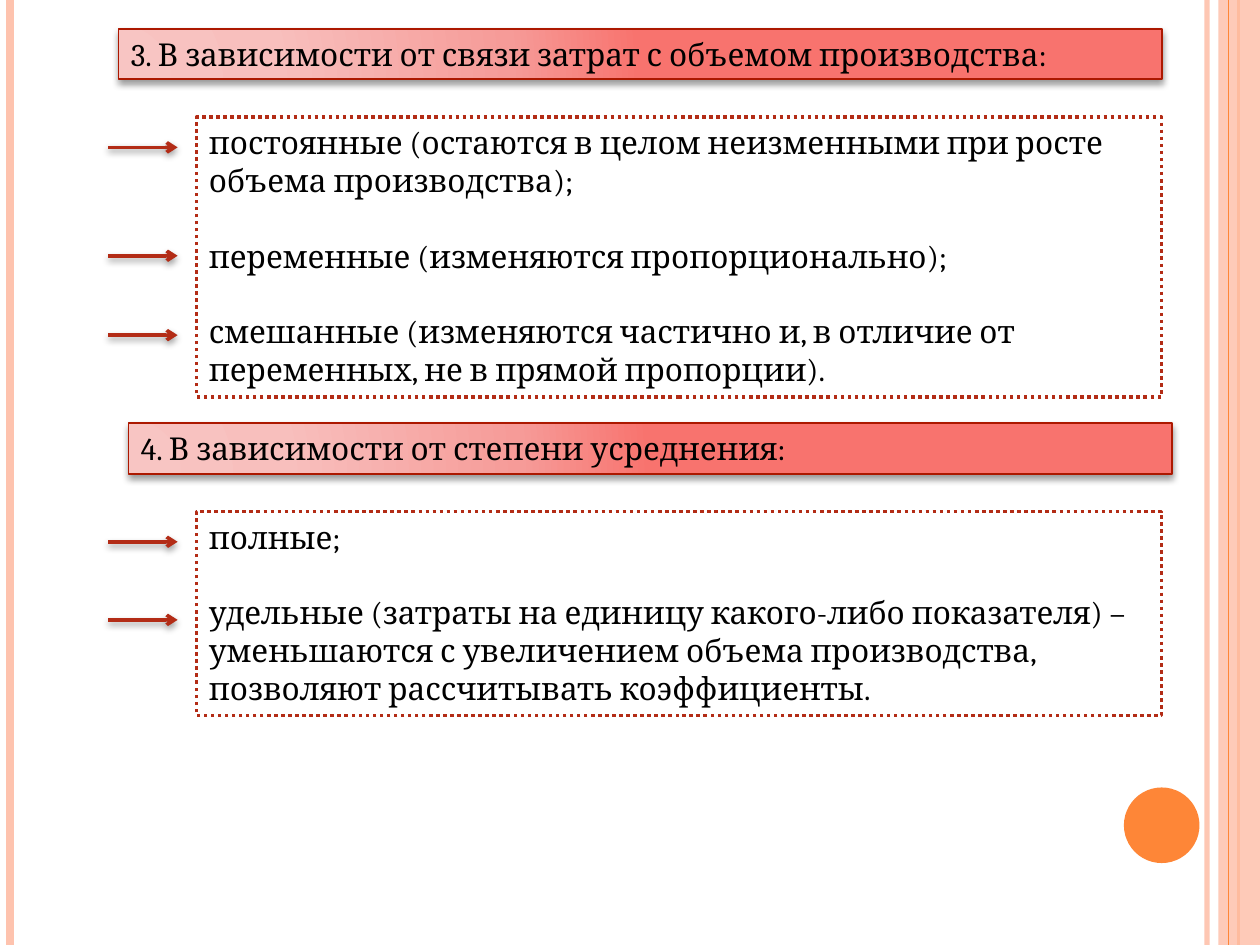
from lxml import etree
from pptx import Presentation
from pptx.dml.color import RGBColor
from pptx.enum.dml import MSO_LINE
from pptx.enum.shapes import MSO_CONNECTOR, MSO_SHAPE
from pptx.enum.text import MSO_ANCHOR, PP_ALIGN
from pptx.oxml import parse_xml
from pptx.oxml.ns import qn
from pptx.util import Inches, Pt

DOTS = MSO_LINE.ROUND_DOT
STRAIGHT = MSO_CONNECTOR.STRAIGHT
RECT = MSO_SHAPE.RECTANGLE
OVAL = MSO_SHAPE.OVAL
LEFT = PP_ALIGN.LEFT
TOP = MSO_ANCHOR.TOP

FONT = "Cambria"
ORANGE = "FE8637"
PEACH = "FEC3AE"
RED = "B32C16"
SPACE = "http://schemas.openxmlformats.org/drawingml/2006/main"
STOPS = [(0, "F8C5C3"), (30, "F8BFBD"), (75, "F69B98"), (100, "F8736E")]

BARS = [(9.58, PEACH, 3, 93), (0.08, PEACH, 4.5, 100), (9.83, ORANGE, 1.5, 100)]
GROUPS = [
    (0.94, 0.23, "3. В зависимости от связи затрат с объемом производства:", 2.22,
     ["постоянные (остаются в целом неизменными при росте объема производства);",
      "переменные (изменяются пропорционально);",
      "смешанные (изменяются частично и, в отличие от переменных, не в прямой пропорции)."],
     [1.17, 2.03, 2.66]),
    (1.02, 3.36, "4. В зависимости от степени усреднения:", 1.62,
     ["полные;",
      "удельные (затраты на единицу какого-либо показателя) – уменьшаются с увеличением "
      "объема производства, позволяют рассчитывать коэффициенты."],
     [4.3, 4.92]),
]


def color(code):
    return RGBColor.from_string(code)


def fade(item, alpha):
    if alpha < 100:
        tone = next(item._element.spPr.iter(qn("a:srgbClr")))
        etree.SubElement(tone, qn("a:alpha"), val=str(alpha * 1000))


def cast(item):
    item._element.spPr.append(parse_xml(
        f'<a:effectLst xmlns:a="{SPACE}">'
        f'<a:outerShdw blurRad="{Pt(4)}" dist="{Pt(2)}" dir="5400000" rotWithShape="0">'
        '<a:srgbClr val="000000"><a:alpha val="40000"/></a:srgbClr>'
        '</a:outerShdw></a:effectLst>'))


def add_line(slide, x1, y1, x2, y2, code, width):
    line = slide.shapes.add_connector(
        STRAIGHT, Inches(x1), Inches(y1), Inches(x2), Inches(y2))
    line.line.color.rgb = color(code)
    line.line.width = Pt(width)
    return line


def add_bar(slide, x, code, width, alpha=100):
    bar = add_line(slide, x, 0, x, 7.5, code, width)
    fade(bar, alpha)
    etree.SubElement(bar._element.spPr, qn("a:effectLst"))


def add_arrow(slide, y):
    arrow = add_line(slide, 0.86, y, 1.41, y, RED, 2)
    etree.SubElement(arrow.line._get_or_add_ln(), qn("a:tailEnd"), type="arrow")
    cast(arrow)


def add_form(slide, kind, x, y, width, height, code):
    form = slide.shapes.add_shape(
        kind, Inches(x), Inches(y), Inches(width), Inches(height))
    form.fill.solid()
    form.fill.fore_color.rgb = color(code)
    form.line.fill.background()
    return form


def add_plain(slide, kind, x, y, width, height, code, alpha=100):
    form = add_form(slide, kind, x, y, width, height, code)
    form.shadow.inherit = False
    fade(form, alpha)


def edge(form, code, width):
    form.line.color.rgb = color(code)
    form.line.width = Pt(width)


def write(form, texts):
    frame = form.text_frame
    frame.word_wrap = True
    frame.vertical_anchor = TOP
    for index, text in enumerate(texts):
        para = frame.paragraphs[0] if index == 0 else frame.add_paragraph()
        para.text = text
        para.alignment = LEFT
        para.space_before = Pt(21.6 if index else 0)
        para.font.name = FONT
        para.font.size = Pt(18)
        para.font.color.rgb = color("000000")


def add_head(slide, x, y, text):
    head = add_form(slide, RECT, x, y, 8.28, 0.4, STOPS[0][1])
    edge(head, "AC1800", 1)
    stops = "".join(f'<a:gs pos="{pos * 1000}"><a:srgbClr val="{code}"/></a:gs>'
                    for pos, code in STOPS)
    blend = parse_xml(
        f'<a:gradFill xmlns:a="{SPACE}" rotWithShape="1"><a:gsLst>{stops}</a:gsLst>'
        '<a:path path="circle">'
        '<a:fillToRect l="5000" t="100000" r="120000" b="10000"/>'
        '</a:path></a:gradFill>')
    props = head._element.spPr
    props.replace(props.find(qn("a:solidFill")), blend)
    cast(head)
    write(head, [text])


def add_list(slide, y, height, texts):
    box = add_form(slide, RECT, 1.56, y, 7.66, height, "FFFFFF")
    edge(box, RED, 2)
    box.line.dash_style = DOTS
    box.shadow.inherit = False
    write(box, texts)


def main():
    deck = Presentation()
    deck.slide_width = Inches(10)
    deck.slide_height = Inches(7.5)
    slide = deck.slides.add_slide(deck.slide_layouts[6])

    for bar in BARS:
        add_bar(slide, *bar)
    add_plain(slide, RECT, 9.67, 0, 0.33, 7.5, PEACH, 87)
    add_bar(slide, 9.75, ORANGE, 0.75)
    add_plain(slide, OVAL, 8.92, 6.25, 0.6, 0.6, ORANGE)

    for x, y, title, height, texts, marks in GROUPS:
        add_head(slide, x, y, title)
        add_list(slide, y + 0.7, height, texts)
        for mark in marks:
            add_arrow(slide, mark)

    deck.save("out.pptx")


if __name__ == "__main__":
    main()
